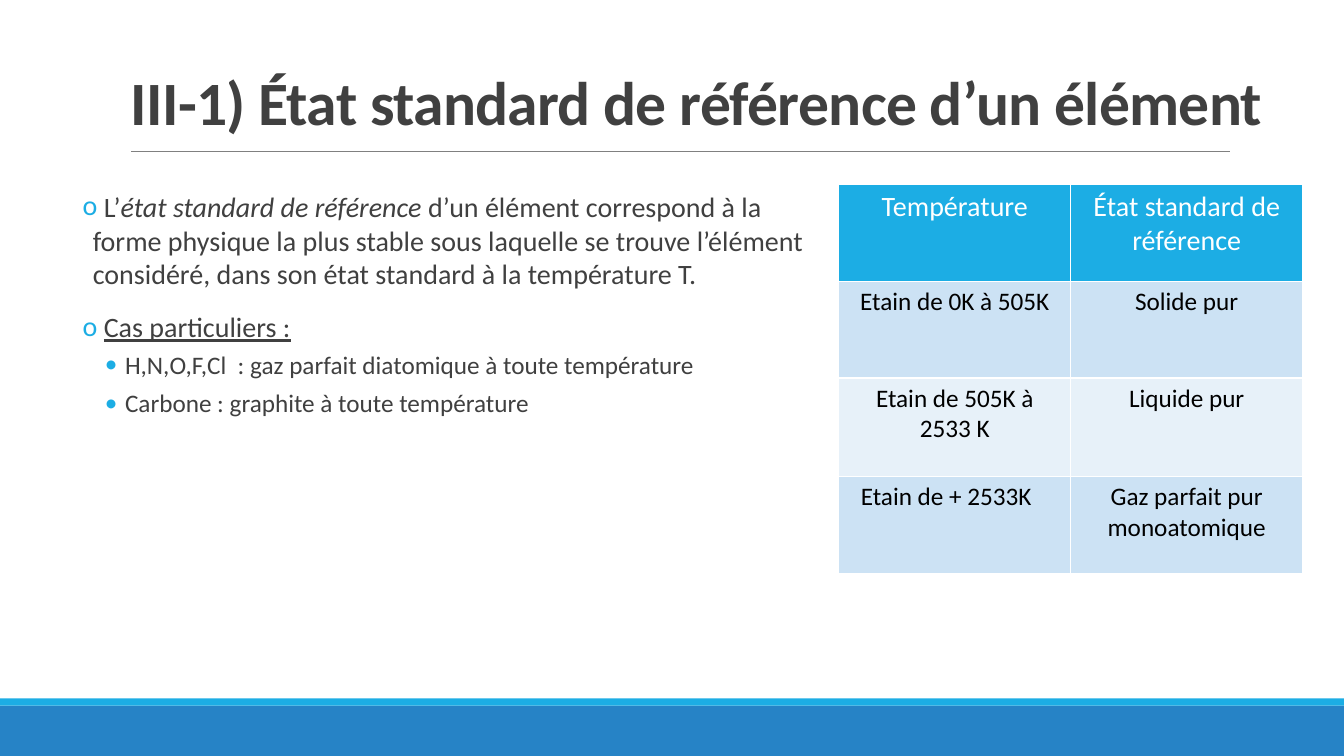
from dataclasses import dataclass, field
from typing import Any

from lxml.etree import SubElement
from pptx import Presentation
from pptx.dml.color import RGBColor as Color
from pptx.enum.shapes import MSO_CONNECTOR as Connector, MSO_SHAPE as Shape
from pptx.enum.text import MSO_ANCHOR as Anchor, PP_ALIGN as Align
from pptx.oxml.ns import qn
from pptx.util import Inches, Pt


@dataclass(frozen=True)
class Theme:
    font: str = "Calibri"
    title_size: float = 44
    body_size: float = 20
    small_size: float = 18
    text: str = "404040"
    black: str = "000000"
    white: str = "FFFFFF"
    rule: str = "808080"
    accent: str = "1CADE4"
    footer: str = "2683C6"
    band_colors: tuple[str, str] = ("CCE2F4", "E7F1F9")


THEME = Theme()


@dataclass(frozen=True)
class Bar:
    top: float
    height: float
    color: str


@dataclass(frozen=True)
class TextRun:
    text: str
    style: dict[str, Any] = field(default_factory=dict)


@dataclass(frozen=True)
class Bullet:
    runs: tuple[TextRun, ...]
    level: int = 0


@dataclass(frozen=True)
class BulletStyle:
    mark: str
    size: float
    left: float
    hanging: float
    spacing: dict[str, Any]


BARS = (Bar(7, 0.5, THEME.footer), Bar(6.93, 0.07, THEME.accent))

BULLET_STYLES = (
    BulletStyle("o", THEME.body_size, 0.1, 0.1,
                {"space_before": Pt(12), "space_after": Pt(2)}),
    BulletStyle("•", THEME.small_size, 0.42, 0.2,
                {"space_before": Pt(2), "space_after": Pt(4)}),
)

BULLETS = (
    Bullet((
        TextRun(" L’"),
        TextRun("état standard de référence ", {"italic": True}),
        TextRun("d’un élément correspond à la forme physique la plus stable sous laquelle "
                "se trouve l’élément considéré, dans son état standard à la température T."),
    )),
    Bullet((TextRun(" "), TextRun("Cas particuliers :", {"underline": True}))),
    Bullet((TextRun("H,N,O,F,Cl  : gaz parfait diatomique à toute température"),), 1),
    Bullet((TextRun("Carbone : graphite à toute température"),), 1),
)

TABLE_ROWS = (
    ("Température", "État standard de référence"),
    ("Etain de 0K à 505K", "Solide pur"),
    ("Etain de 505K à 2533 K", "Liquide pur"),
    ("Etain de + 2533K", "Gaz parfait pur monoatomique"),
)
ROW_HEIGHTS = (0.96, 0.96, 0.98, 0.96)


def set_attributes(target: Any, values: dict[str, Any]) -> None:
    for name, value in values.items():
        setattr(target, name, value)


def add_run(paragraph: Any, text: str, size: float, color: str, **style: Any) -> Any:
    run = paragraph.add_run()
    run.text = text
    set_attributes(run.font, {"name": THEME.font, "size": Pt(size), **style})
    run.font.color.rgb = Color.from_string(color)
    return run


def add_bar(slide: Any, bar: Bar, width: int) -> None:
    shape = slide.shapes.add_shape(
        Shape.RECTANGLE, 0, Inches(bar.top), width, Inches(bar.height))
    shape.shadow.inherit = False
    shape.fill.solid()
    shape.fill.fore_color.rgb = Color.from_string(bar.color)
    shape.line.fill.background()


def add_rule(slide: Any) -> None:
    line = slide.shapes.add_connector(
        Connector.STRAIGHT, Inches(1.3), Inches(1.5), Inches(12.2), Inches(1.5))
    line.line.width = Pt(0.5)
    line.line.color.rgb = Color.from_string(THEME.rule)
    SubElement(line._element.spPr, qn("a:effectLst"))


def add_title(slide: Any, text: str) -> None:
    frame = slide.shapes.add_textbox(
        Inches(1.2), Inches(0.31), Inches(11.56), Inches(1.11)).text_frame
    set_attributes(frame, {"word_wrap": True, "vertical_anchor": Anchor.BOTTOM})
    paragraph = frame.paragraphs[0]
    paragraph.line_spacing = 0.85
    run = add_run(paragraph, text, THEME.title_size, THEME.text, bold=True)
    run._r.get_or_add_rPr().set("spc", "-50")


def set_bullet(paragraph: Any, style: BulletStyle) -> None:
    set_attributes(paragraph, style.spacing)
    properties = paragraph._p.get_or_add_pPr()
    properties.set("marL", str(Inches(style.left)))
    properties.set("indent", str(-Inches(style.hanging)))
    color = SubElement(properties, qn("a:buClr"))
    SubElement(color, qn("a:srgbClr"), val=THEME.accent)
    SubElement(properties, qn("a:buFont"), typeface=THEME.font)
    SubElement(properties, qn("a:buChar"), char=style.mark)


def add_bullets(slide: Any, bullets: tuple[Bullet, ...]) -> None:
    frame = slide.shapes.add_textbox(
        Inches(0.82), Inches(1.83), Inches(7.22), Inches(4.4)).text_frame
    set_attributes(frame, {"word_wrap": True, "margin_left": 0, "margin_right": 0})
    for index, bullet in enumerate(bullets):
        paragraph = frame.add_paragraph() if index else frame.paragraphs[0]
        paragraph.level = bullet.level
        style = BULLET_STYLES[bullet.level]
        set_bullet(paragraph, style)
        for run in bullet.runs:
            add_run(paragraph, run.text, style.size, THEME.text, **run.style)


def set_borders(cell: Any) -> None:
    """Draw the four thin white edges; call before filling the cell."""
    properties = cell._tc.get_or_add_tcPr()
    for side in ("L", "R", "T", "B"):
        edge = SubElement(properties, qn(f"a:ln{side}"), w=str(Pt(0.96)))
        SubElement(SubElement(edge, qn("a:solidFill")), qn("a:srgbClr"), val=THEME.white)


def add_state_table(slide: Any) -> None:
    table = slide.shapes.add_table(
        len(TABLE_ROWS), 2, Inches(8.32), Inches(1.83),
        Inches(4.6), Inches(sum(ROW_HEIGHTS))).table
    for row_index, texts in enumerate(TABLE_ROWS):
        table.rows[row_index].height = Inches(ROW_HEIGHTS[row_index])
        if row_index == 0:
            fill, size, color = THEME.accent, THEME.body_size, THEME.white
        else:
            fill = THEME.band_colors[(row_index - 1) % 2]
            size, color = THEME.small_size, THEME.black
        for column_index, text in enumerate(texts):
            cell = table.cell(row_index, column_index)
            set_borders(cell)
            cell.fill.solid()
            cell.fill.fore_color.rgb = Color.from_string(fill)
            paragraph = cell.text_frame.paragraphs[0]
            paragraph.alignment = Align.CENTER
            add_run(paragraph, text, size, color, bold=False)
    table.cell(len(TABLE_ROWS) - 1, 0).margin_right = Inches(0.27)


def main() -> None:
    presentation = Presentation()
    set_attributes(presentation, {"slide_width": Inches(13.33), "slide_height": Inches(7.5)})
    slide = presentation.slides.add_slide(presentation.slide_layouts[6])
    for bar in BARS:
        add_bar(slide, bar, presentation.slide_width)
    add_rule(slide)
    add_title(slide, "III-1) État standard de référence d’un élément")
    add_bullets(slide, BULLETS)
    add_state_table(slide)
    presentation.save("out.pptx")


if __name__ == "__main__":
    main()
